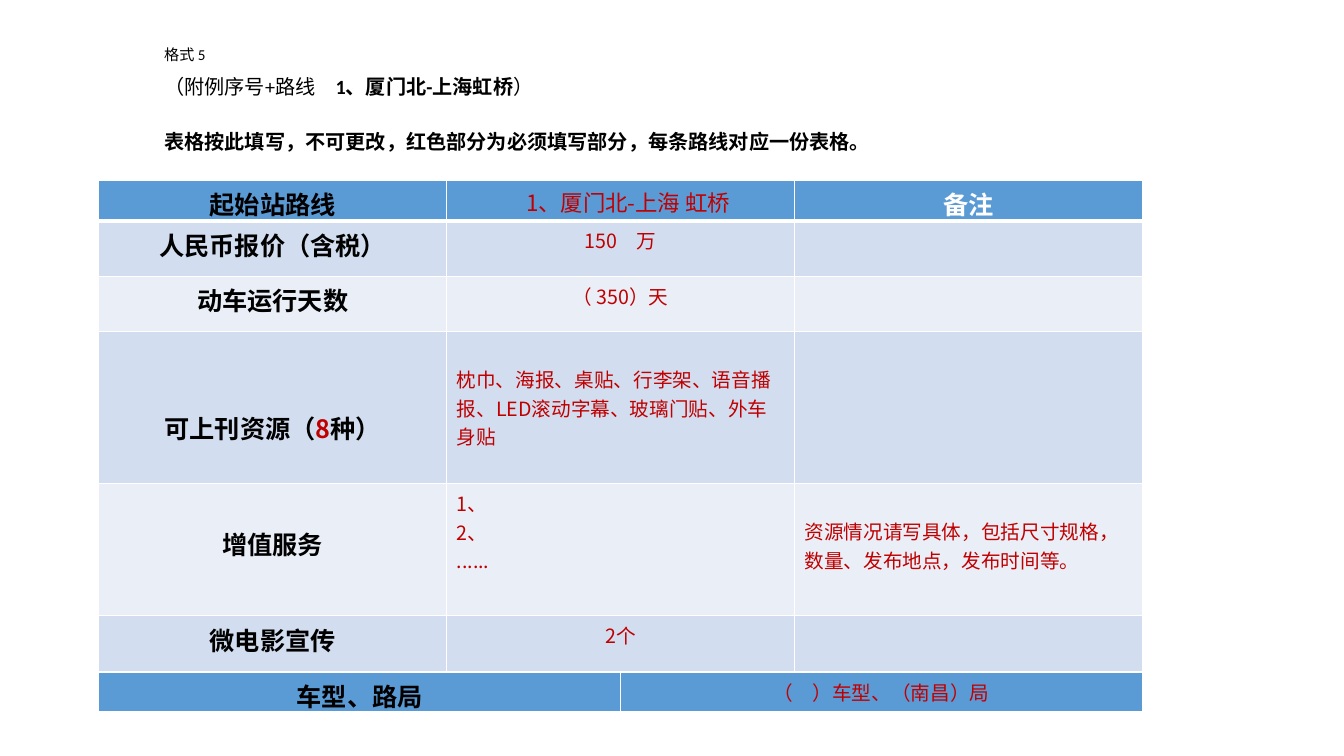
from lxml.etree import SubElement
from pptx import Presentation
from pptx.dml.color import RGBColor
from pptx.enum.text import MSO_ANCHOR, PP_ALIGN
from pptx.oxml import parse_xml
from pptx.oxml.ns import nsdecls, qn
from pptx.util import Inches, Pt

CJK = "Noto Sans CJK SC"
BLACK, RED, WHITE, HEADER = "000000", "C00000", "FFFFFF", "5B9BD5"
BANDS = ["EAEFF7", "D2DEEF"]
LABEL = dict(size=Pt(18), bold=True, color=BLACK)
ENTRY = dict(size=Pt(14), bold=False, color=RED)
TITLE = dict(size=Pt(14.4), bold=False, color=BLACK, name="Calibri")


def rgb(value):
    return RGBColor.from_string(value)


def label(*runs, **cell):
    """Bold centred cell; a run is a text or a (text, changes) pair."""
    pairs = [run if isinstance(run, tuple) else (run, {}) for run in runs]
    return dict(paragraphs=[[(text, LABEL | changes) for text, changes in pairs]], **cell)


def entry(*lines, align=PP_ALIGN.CENTER, size=14, **cell):
    """Red cell with one paragraph for each line."""
    style = ENTRY | dict(size=Pt(size))
    return dict(paragraphs=[[(line, style)] for line in lines], align=align, **cell)


class FormSlide:
    def __init__(self, presentation):
        self.slide = presentation.slides.add_slide(presentation.slide_layouts[6])
        self.width = presentation.slide_width
        self.height = presentation.slide_height

    def across(self, percent):
        return round(self.width * percent / 100)

    def down(self, percent):
        return round(self.height * percent / 100)

    def add_runs(self, paragraph, runs, **formats):
        for key, value in formats.items():
            setattr(paragraph, key, value)
        for text, style in runs:
            run = paragraph.add_run()
            run.text = text
            style = dict(name=CJK) | style
            run.font.color.rgb = rgb(style.pop("color"))
            for key, value in style.items():
                setattr(run.font, key, value)
            SubElement(run.font._element, qn("a:ea")).set("typeface", CJK)

    def paragraphs(self, frame, items):
        """Fill a text frame from (runs, formats) pairs."""
        for index, (runs, formats) in enumerate(items):
            paragraph = frame.add_paragraph() if index else frame.paragraphs[0]
            self.add_runs(paragraph, runs, **formats)

    def text(self, left, top, width, height, items):
        box = self.slide.shapes.add_textbox(
            self.across(left), self.down(top), self.across(width), self.down(height))
        frame = box.text_frame
        frame.word_wrap = True
        frame.vertical_anchor = MSO_ANCHOR.MIDDLE
        self.paragraphs(frame, items)

    def borders(self, cell, bottom):
        properties = cell._tc.get_or_add_tcPr()
        for index, side in enumerate("LRTB"):
            points = bottom if side == "B" else 1
            properties.insert(index, parse_xml(
                f'<a:ln{side} {nsdecls("a")} w="{Pt(points)}"><a:solidFill>'
                f'<a:srgbClr val="{WHITE}"/></a:solidFill></a:ln{side}>'))

    def cell(self, cell, fill, bottom, paragraphs=(), align=PP_ALIGN.CENTER,
             top=None, left=None):
        cell.fill.solid()
        cell.fill.fore_color.rgb = rgb(fill)
        self.borders(cell, bottom)
        if top:
            cell.margin_top = self.down(top)
        if left:
            cell.margin_left = self.across(left)
        self.paragraphs(cell.text_frame,
                        [(runs, dict(alignment=align)) for runs in paragraphs])

    def table(self, left, top, width, heights, rows):
        """First row is the header; the rows below are banded."""
        columns = len(rows[0])
        table = self.slide.shapes.add_table(
            len(rows), columns, self.across(left), self.down(top),
            self.across(width), self.down(sum(heights))).table
        table.first_row = table.horz_banding = False
        for column in table.columns:
            column.width = self.across(width / columns)
        for row, (height, cells) in enumerate(zip(heights, rows)):
            table.rows[row].height = self.down(height)
            fill = BANDS[row % 2] if row else HEADER
            for column, content in enumerate(cells):
                self.cell(table.cell(row, column), fill, 1 if row else 3, **content)


def main():
    presentation = Presentation()
    presentation.slide_width, presentation.slide_height = Inches(13.33), Inches(7.5)
    form = FormSlide(presentation)
    bold = TITLE | dict(bold=True)
    form.text(11.48, 5.87, 83.57, 14.93, [
        ([("格式 5", TITLE | dict(size=Pt(10.8)))],
         dict(line_spacing=0.9, space_after=Pt(9.3))),
        ([("（附例序号+路线　", TITLE), ("1、厦门北-上海虹桥", bold), ("）", TITLE)],
         dict(line_spacing=0.9, space_after=Pt(24))),
        ([("表格按此填写，不可更改，红色部分为必须填写部分，每条路线对应一份表格。", bold)],
         dict(line_spacing=0.9)),
    ])

    left, width = 7.35, 77.64
    form.table(left, 23.87, width, [4.4, 7.33, 7.33, 20.13, 17.47, 7.33], [
        [label("起始站路线"), entry("1、厦门北-上海 虹桥", size=16, left=1.88),
         label(("备注", dict(color=WHITE)))],
        [label("人民币报价（含税）"), entry("150　万"), {}],
        [label("动车运行天数"), entry("（ 350）天"), {}],
        [label("可上刊资源（", ("8", dict(color=RED)), "种）", top=10.27),
         entry("枕巾、海报、桌贴、行李架、语音播报、LED滚动字幕、玻璃门贴、外车身贴",
               align=PP_ALIGN.LEFT, top=4.4), {}],
        [label("增值服务", top=5.47),
         entry("1、", "2、", "......", align=PP_ALIGN.LEFT),
         entry("资源情况请写具体，包括尺寸规格，数量、发布地点，发布时间等。",
               align=PP_ALIGN.LEFT, top=4.4)],
        [label("微电影宣传"), entry("2个"), {}],
    ])
    form.table(left, 88.93, width, [5.33],
               [[label("车型、路局"), entry("（　）车型、（南昌）局")]])
    presentation.save("out.pptx")


if __name__ == "__main__":
    main()
